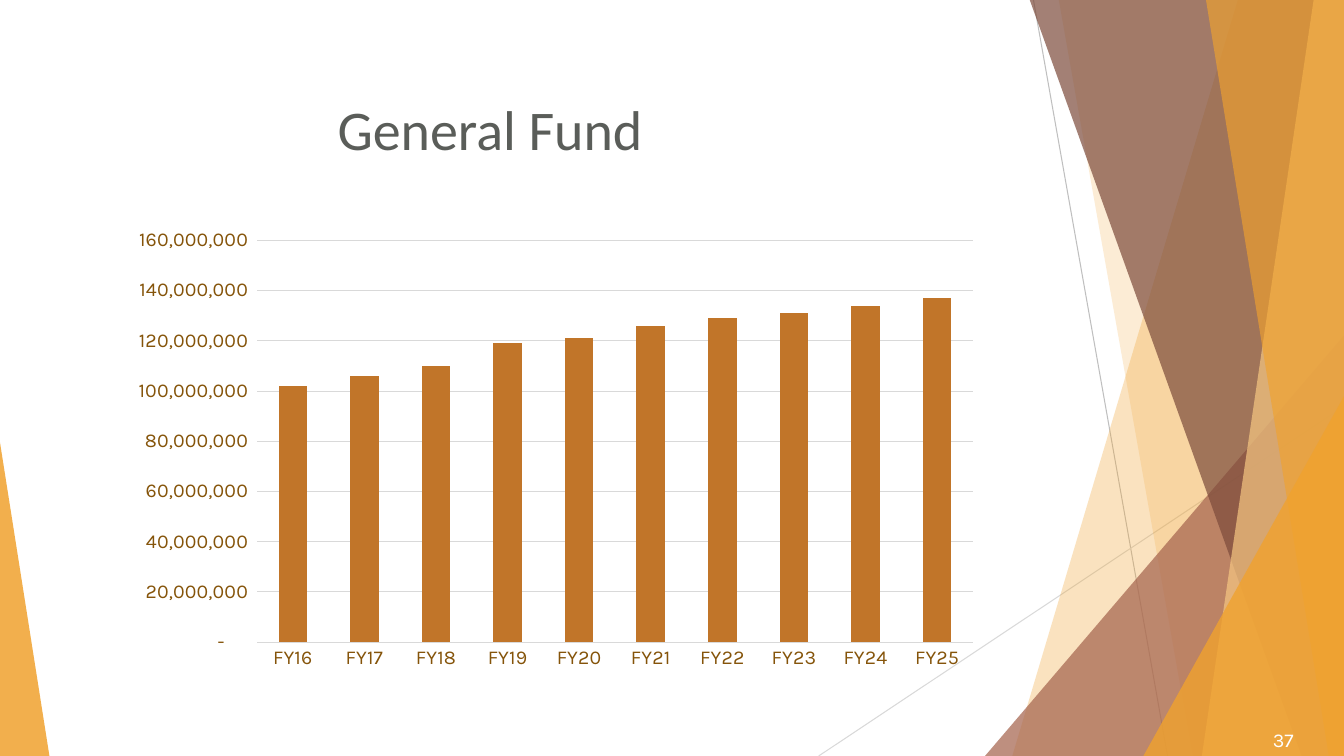
from lxml.etree import SubElement
from pptx import Presentation
from pptx.chart.data import CategoryChartData
from pptx.dml.color import RGBColor
from pptx.enum.chart import XL_CHART_TYPE, XL_TICK_MARK
from pptx.enum.shapes import MSO_CONNECTOR, MSO_SHAPE
from pptx.enum.text import MSO_ANCHOR, PP_ALIGN
from pptx.oxml import parse_xml
from pptx.oxml.ns import nsdecls, qn
from pptx.util import Inches, Pt

THEME = {
    "gold": "F0A22E", "pale": "F6C782", "rust": "A5644E", "brown": "7C4B3B",
    "bar": "C17529", "axis": "85540A", "title": "5A5D59", "white": "FFFFFF",
    "grid": "D9D9D9", "gray": "BFBFBF",
    "head": "Calibri", "body": "Karla",
    "title_size": 40, "text_size": 14, "rule": 0.75,
}
WIDE, HIGH = 13.33, 7.5

# Start, end, colour
RULES = [
    ((10.25, 0), (11.58, HIGH), "gray"),
    ((WIDE, 4.03), (8.12, HIGH), "grid"),
]
# Bands reach the right edge: ("band", top x, bottom x, colour, opacity)
# Triangles stand on the bottom: ("peak", left, top, width, apex, colour, opacity)
DECOR = [
    ("band", 12.28, 10.04, "gold", 30),
    ("band", 10.5, 11.83, "gold", 20),
    ("peak", 9.77, 3.33, 3.56, 1, "rust", 72),
    ("band", 10.21, 12.91, "brown", 70),
    ("band", 13.03, 11.92, "pale", 70),
    ("band", 11.96, 13.18, "gold", 65),
    ("peak", 11.34, 3.93, 1.99, 1, "gold", 80),
    ("peak", 0, 4.39, 0.49, 0, "gold", 85),
]
TITLE = "General Fund"
PAGE = "37"
YEARS = [f"FY{year}" for year in range(16, 26)]
MILLIONS = [102, 106, 110, 119, 121, 126, 129, 131, 134, 137]
FORMAT = '_(* #,##0_);_(* \\(#,##0\\);_(* "-"??_);_(@_)'
PLOT = {"x": 0.157, "y": 0.064, "w": 0.82, "h": 0.834}


def color(name):
    return RGBColor.from_string(THEME[name])


def style(font, face, size, tint):
    font.name = THEME[face]
    font.size = Pt(THEME[size])
    font.color.rgb = color(tint)


def paint(shape, tint, alpha):
    """Fill a shape without outline, at an opacity in percent."""
    shape.shadow.inherit = False
    shape.fill.solid()
    shape.fill.fore_color.rgb = color(tint)
    shape.line.fill.background()
    node = shape.fill._xPr.find(".//" + qn("a:srgbClr"))
    SubElement(node, qn("a:alpha"), val=str(alpha * 1000))


def add_rule(slide, start, end, tint):
    ends = [Inches(v) for v in start + end]
    rule = slide.shapes.add_connector(MSO_CONNECTOR.STRAIGHT, *ends)
    rule.line.color.rgb = color(tint)
    rule.line.width = Pt(THEME["rule"])
    SubElement(rule._element.spPr, qn("a:effectLst"))


def add_band(slide, top, base, tint, alpha):
    spots = [(top, -0.01), (WIDE, -0.01), (WIDE, HIGH), (base, HIGH)]
    spots = [(Inches(x), Inches(y)) for x, y in spots]
    form = slide.shapes.build_freeform(*spots[0])
    form.add_line_segments(spots[1:], close=True)
    paint(form.convert_to_shape(), tint, alpha)


def add_peak(slide, left, top, width, apex, tint, alpha):
    box = [Inches(v) for v in (left, top, width, HIGH - top)]
    peak = slide.shapes.add_shape(MSO_SHAPE.ISOSCELES_TRIANGLE, *box)
    peak.adjustments[0] = apex
    paint(peak, tint, alpha)


def add_text(slide, text, box, anchor, align, *look):
    frame = slide.shapes.add_textbox(*[Inches(v) for v in box]).text_frame
    frame.word_wrap = True
    frame.vertical_anchor = anchor
    line = frame.paragraphs[0]
    line.text = text
    line.alignment = align
    style(line.font, *look)


def place_plot(chart):
    """Fix the inner plot area as fractions of the chart."""
    area = chart._chartSpace.chart.plotArea
    for old in area.findall(qn("c:layout")):
        area.remove(old)
    layout = parse_xml(f"<c:layout {nsdecls('c')}/>")
    manual = SubElement(layout, qn("c:manualLayout"))
    SubElement(manual, qn("c:layoutTarget"), val="inner")
    for key in "xy":
        SubElement(manual, qn(f"c:{key}Mode"), val="edge")
    for key, value in PLOT.items():
        SubElement(manual, qn(f"c:{key}"), val=str(value))
    area.insert(0, layout)


def add_bars(slide):
    data = CategoryChartData(number_format="#,##0")
    data.categories = YEARS
    data.add_series("Series 1", [m * 1_000_000 for m in MILLIONS])
    box = [Inches(v) for v in (1.19, 2.08, 8.66, 4.78)]
    chart = slide.shapes.add_chart(
        XL_CHART_TYPE.COLUMN_CLUSTERED, *box, data).chart
    chart.has_title = chart.has_legend = False
    style(chart.font, "body", "text_size", "axis")
    plot = chart.plots[0]
    plot.vary_by_categories = False
    plot.gap_width = 150
    fill = plot.series[0].format.fill
    fill.solid()
    fill.fore_color.rgb = color("bar")
    for axis in (chart.category_axis, chart.value_axis):
        axis.major_tick_mark = axis.minor_tick_mark = XL_TICK_MARK.NONE
        axis.format.line.fill.background()
        style(axis.tick_labels.font, "body", "text_size", "axis")
    axis = chart.value_axis
    axis.minimum_scale, axis.maximum_scale = 0, 160_000_000
    axis.major_unit = 20_000_000
    axis.tick_labels.number_format = FORMAT
    axis.tick_labels.number_format_is_linked = False
    grid = axis.major_gridlines.format.line
    grid.color.rgb = color("grid")
    grid.width = Pt(THEME["rule"])
    place_plot(chart)


def main():
    deck = Presentation()
    deck.slide_width, deck.slide_height = Inches(WIDE), Inches(HIGH)
    slide = deck.slides.add_slide(deck.slide_layouts[6])
    for rule in RULES:
        add_rule(slide, *rule)
    draw = {"band": add_band, "peak": add_peak}
    for kind, *rest in DECOR:
        draw[kind](slide, *rest)
    add_text(slide, TITLE, (3.25, 0.4, 8.2, 1.25), MSO_ANCHOR.BOTTOM,
             PP_ALIGN.LEFT, "head", "title_size", "title")
    add_text(slide, PAGE, (12.03, 7.17, 0.9, 0.33), MSO_ANCHOR.MIDDLE,
             PP_ALIGN.RIGHT, "body", "text_size", "white")
    add_bars(slide)
    deck.save("out.pptx")


if __name__ == "__main__":
    main()
